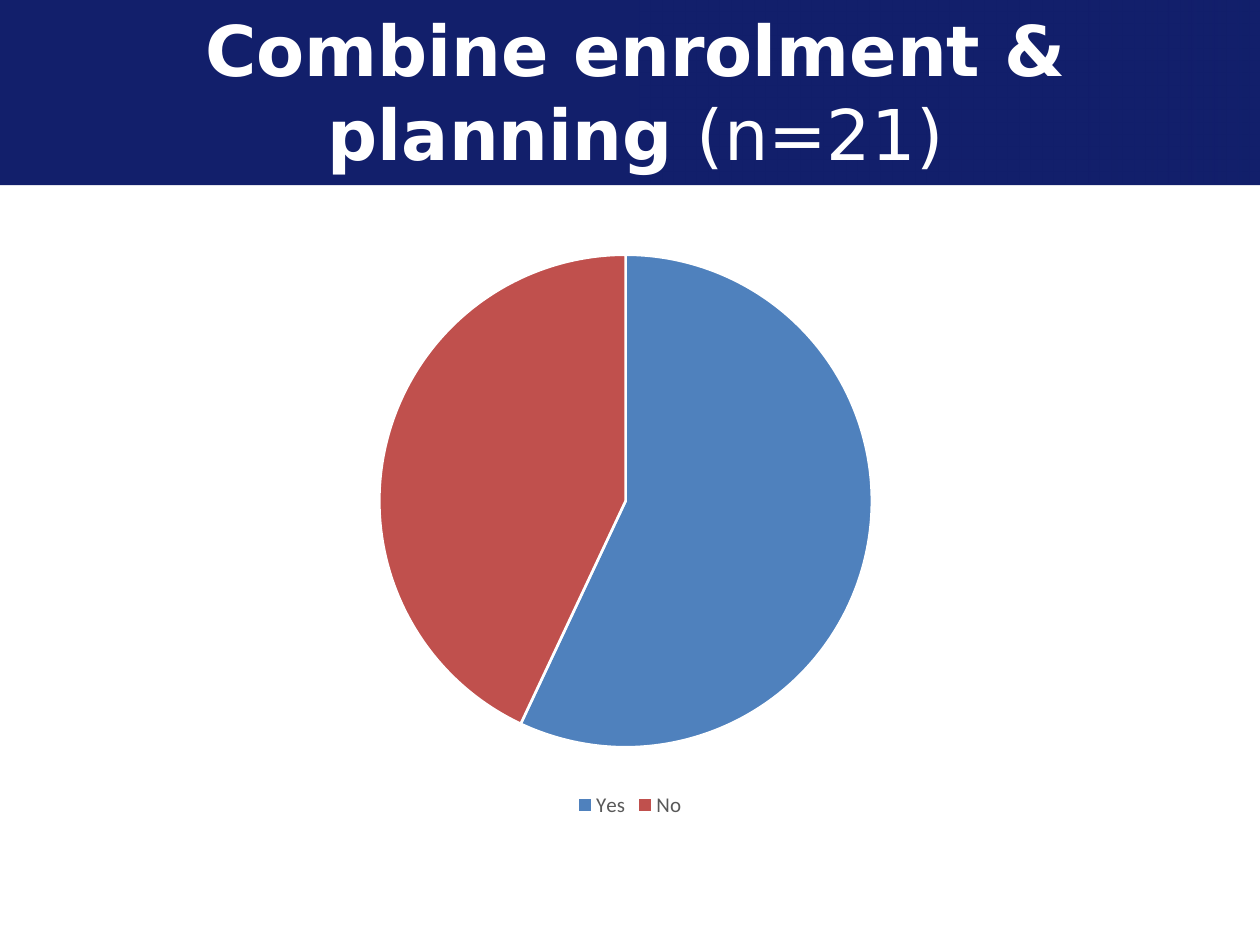
from dataclasses import dataclass

from lxml.etree import SubElement
from pptx import Presentation
from pptx.chart.data import CategoryChartData
from pptx.dml.color import RGBColor
from pptx.enum.chart import XL_CHART_TYPE as ChartType, XL_LEGEND_POSITION as LegendPosition
from pptx.enum.shapes import MSO_SHAPE as Preset
from pptx.enum.text import MSO_ANCHOR as Anchor, PP_ALIGN as Align
from pptx.oxml import parse_xml
from pptx.oxml.ns import nsdecls, qn
from pptx.util import Inches, Pt

NAVY, WHITE, GREY, BLACK = "121F6B", "FFFFFF", "595959", "000000"


@dataclass(frozen=True)
class Area:
    left: float
    top: float
    width: float
    height: float

    def lengths(self) -> tuple:
        return tuple(Inches(n) for n in (self.left, self.top, self.width, self.height))


@dataclass(frozen=True)
class Slice:
    label: str
    value: int
    colour: str


@dataclass(frozen=True)
class Span:
    text: str
    bold: bool


BANNER = Area(0, 0, 10, 1.47)
SHEEN = Area(5.08, 0, 4.92, 1.46)
TITLE = Area(0.28, 0.21, 9.53, 1.02)
CHART = Area(1.56, 1.93, 6.88, 4.6)
PLOT = {"x": 0.21, "y": 0.02, "w": 0.57, "h": 0.85}
SHEEN_STOPS = ((0, 66), (36, 95), (77, 100))
TITLE_SPANS = (Span("Combine enrolment & planning ", True), Span("(n=21)", False))
SLICES = (Slice("Yes", 57, "4F81BD"), Slice("No", 43, "C0504D"))


def colour(value: str) -> RGBColor:
    return RGBColor.from_string(value)


def set_font(font, tint: str, **values) -> None:
    for name, value in values.items():
        setattr(font, name, value)
    font.color.rgb = colour(tint)


def add_band(page, area: Area):
    band = page.shapes.add_shape(Preset.RECTANGLE, *area.lengths())
    band.shadow.inherit = False
    band.fill.solid()
    band.fill.fore_color.rgb = colour(NAVY)
    band.line.fill.background()
    return band


def fade(band, stops: tuple) -> None:
    marks = "".join(
        f'<a:gs pos="{position * 1000}"><a:srgbClr val="{NAVY}">'
        f'<a:alpha val="{opacity * 1000}"/></a:srgbClr></a:gs>'
        for position, opacity in stops
    )
    gradient = parse_xml(
        f'<a:gradFill {nsdecls("a")}><a:gsLst>{marks}</a:gsLst>'
        '<a:lin ang="10800000" scaled="0"/></a:gradFill>'
    )
    solid = band.element.spPr.find(qn("a:solidFill"))
    solid.getparent().replace(solid, gradient)


def add_title(page, area: Area, spans: tuple) -> None:
    box = page.shapes.add_textbox(*area.lengths())
    frame = box.text_frame
    frame.word_wrap = True
    frame.vertical_anchor = Anchor.MIDDLE
    para = frame.paragraphs[0]
    para.alignment = Align.CENTER
    for span in spans:
        run = para.add_run()
        run.text = span.text
        set_font(run.font, WHITE, name="DejaVu Sans", size=Pt(40), bold=span.bold)


def place_plot(chart, fractions: dict) -> None:
    plot_area = chart.element.find(".//" + qn("c:plotArea"))
    layout = plot_area.find(qn("c:layout"))
    if layout is None:
        layout = parse_xml(f'<c:layout {nsdecls("c")}/>')
        plot_area.insert(0, layout)
    manual = SubElement(layout, qn("c:manualLayout"))
    settings = {"layoutTarget": "inner", "xMode": "edge", "yMode": "edge", **fractions}
    for name, value in settings.items():
        SubElement(manual, qn(f"c:{name}")).set("val", str(value))


def add_pie(page, area: Area, slices: tuple) -> None:
    data = CategoryChartData()
    data.categories = [part.label for part in slices]
    data.add_series("Series 1", [part.value for part in slices])
    chart = page.shapes.add_chart(ChartType.PIE, *area.lengths(), data).chart
    set_font(chart.font, BLACK, name="Calibri", size=Pt(10))
    chart.has_title = False
    chart.has_legend = True
    chart.legend.position = LegendPosition.BOTTOM
    chart.legend.include_in_layout = False
    set_font(chart.legend.font, GREY, name="Calibri", size=Pt(12))
    pie = chart.plots[0]
    pie.vary_by_categories = True
    for index, part in enumerate(slices):
        style = pie.series[0].points[index].format
        style.fill.solid()
        style.fill.fore_color.rgb = colour(part.colour)
        style.line.color.rgb = colour(WHITE)
        style.line.width = Pt(1.5)
    place_plot(chart, PLOT)


def main() -> None:
    """Build the enrolment and planning slide."""
    deck = Presentation()
    deck.slide_width, deck.slide_height = Inches(10), Inches(7.5)
    page = deck.slides.add_slide(deck.slide_layouts[6])
    add_band(page, BANNER)
    fade(add_band(page, SHEEN), SHEEN_STOPS)
    add_title(page, TITLE, TITLE_SPANS)
    add_pie(page, CHART, SLICES)
    deck.save("out.pptx")


if __name__ == "__main__":
    main()
